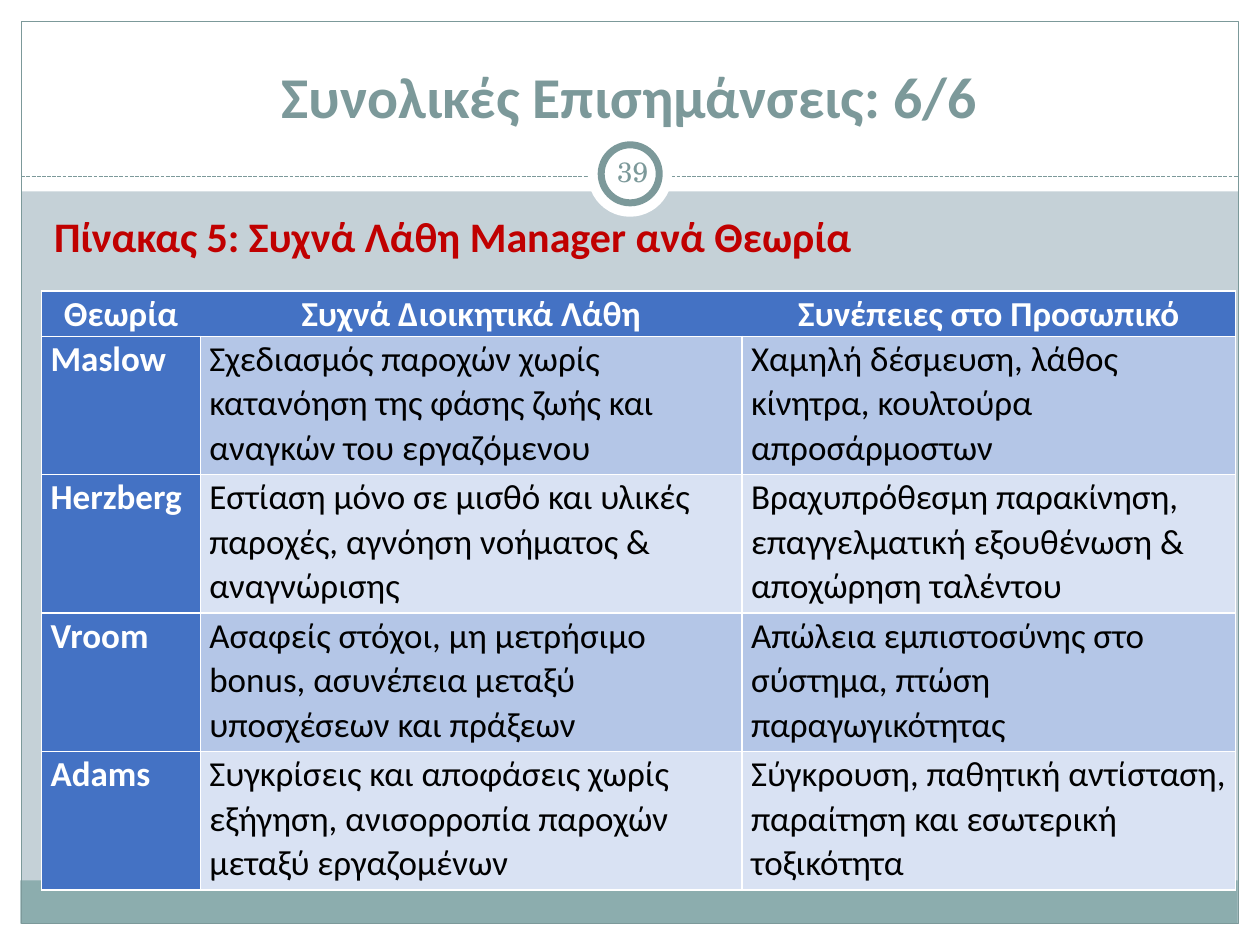
from lxml import etree
from pptx import Presentation
from pptx import util as u
from pptx.dml.color import RGBColor
from pptx.enum import dml, shapes, text
from pptx.oxml import ns

Cm, Pt = u.Cm, u.Pt
COLORS = {k: RGBColor.from_string(v) for k, v in {
    "back": "C5D1D7", "white": "FFFFFF", "black": "000000", "teal": "7C999A",
    "band": "8CADAE", "red": "C00000", "head": "4472C4",
    "odd": "B4C6E7", "even": "D9E2F3"}.items()}


def write(tf, words, size, color, bold=False, font="Calibri", align="LEFT",
          anchor="TOP", margins=(0.25, 0.13, 0.25, 0.13), spacing=None):
    tf.word_wrap = True
    tf.vertical_anchor = text.MSO_ANCHOR[anchor]
    sides = ("margin_left", "margin_top", "margin_right", "margin_bottom")
    for side, value in zip(sides, margins):
        setattr(tf, side, Cm(value))
    p = tf.paragraphs[0]
    p.alignment = text.PP_ALIGN[align]
    p.line_spacing = spacing
    r = p.add_run()
    r.text = words
    for name, value in {"size": Pt(size), "bold": bold, "name": font}.items():
        setattr(r.font, name, value)
    r.font.color.rgb = COLORS[color]


def border(cell, side, color=None):
    ln = etree.SubElement(cell._tc.get_or_add_tcPr(), ns.qn(f"a:ln{side}"), w=str(Pt(1)))
    if color is None:
        etree.SubElement(ln, ns.qn("a:noFill"))
    else:
        fill = etree.SubElement(ln, ns.qn("a:solidFill"))
        etree.SubElement(fill, ns.qn("a:srgbClr"), val=str(COLORS[color]))


prs = Presentation()
prs.slide_width, prs.slide_height = Cm(25.4), Cm(19.05)
s = prs.slides.add_slide(prs.slide_layouts[5])
s.background.fill.solid()
s.background.fill.fore_color.rgb = COLORS["back"]

# Frame, bottom band, dashed rule and number badge
RECT, OVAL = shapes.MSO_SHAPE.RECTANGLE, shapes.MSO_SHAPE.OVAL
decor = [
    (RECT, (0, 18.62, 25.4, 0.43), "white", None),
    (RECT, (0, 0, 25.4, 3.86), "white", None),
    (RECT, (0, 0, 0.43, 19.05), "white", None),
    (RECT, (24.97, 0, 0.43, 19.05), "white", None),
    (RECT, (0.41, 17.75, 24.54, 0.87), "band", None),
    (RECT, (0.43, 0.43, 24.54, 18.19), None, 0.75),
    ("rule", (0.43, 3.56, 24.97, 3.56), None, 0.75),
    (OVAL, (11.85, 2.67, 1.7, 1.7), "white", None),
    (OVAL, (12.12, 2.92, 1.17, 1.17), "white", 4),
]
for kind, box, fill, width in decor:
    box = [Cm(v) for v in box]
    if kind == "rule":
        sp = s.shapes.add_connector(shapes.MSO_CONNECTOR.STRAIGHT, *box)
        sp.line.dash_style = dml.MSO_LINE.SQUARE_DOT
        etree.SubElement(sp.element.spPr, ns.qn("a:effectLst"))
    else:
        sp = s.shapes.add_shape(kind, *box)
        sp.shadow.inherit = False
        if fill:
            sp.fill.solid()
            sp.fill.fore_color.rgb = COLORS[fill]
        else:
            sp.fill.background()
    if width:
        sp.line.color.rgb = COLORS["teal"]
        sp.line.width = Pt(width)
    else:
        sp.line.fill.background()

# Table caption and slide number
caption = s.shapes.add_textbox(Cm(0.84), Cm(4.11), Cm(23.62), Cm(1.22))
write(caption.text_frame, "Πίνακας 5: Συχνά Λάθη Manager ανά Θεωρία", 24, "red", True)
number = s.shapes.add_textbox(Cm(12.12), Cm(2.84), Cm(1.27), Cm(1.22))
write(number.text_frame, "39", 16, "teal", font="TeX Gyre Schola", align="CENTER",
      anchor="MIDDLE", margins=[0.13] * 4)

# Title, brought in front of the frame
title = s.shapes.title
title.left, title.top, title.width, title.height = Cm(0.84), Cm(0.64), Cm(23.7), Cm(2.11)
write(title.text_frame, "Συνολικές Επισημάνσεις: 6/6", 33, "teal", True,
      align="CENTER", anchor="BOTTOM")
title.element.getparent().append(title.element)

# Table of common mistakes
rows = [
    ("Θεωρία", "Συχνά Διοικητικά Λάθη", "Συνέπειες στο Προσωπικό"),
    ("Maslow",
     "Σχεδιασμός παροχών χωρίς κατανόηση της φάσης ζωής και αναγκών του εργαζόμενου",
     "Χαμηλή δέσμευση, λάθος κίνητρα, κουλτούρα απροσάρμοστων"),
    ("Herzberg",
     "Εστίαση μόνο σε μισθό και υλικές παροχές, αγνόηση νοήματος & αναγνώρισης",
     "Βραχυπρόθεσμη παρακίνηση, επαγγελματική εξουθένωση & αποχώρηση ταλέντου"),
    ("Vroom",
     "Ασαφείς στόχοι, μη μετρήσιμο bonus, ασυνέπεια μεταξύ υποσχέσεων και πράξεων",
     "Απώλεια εμπιστοσύνης στο σύστημα, πτώση παραγωγικότητας"),
    ("Adams",
     "Συγκρίσεις και αποφάσεις χωρίς εξήγηση, ανισορροπία παροχών μεταξύ εργαζομένων",
     "Σύγκρουση, παθητική αντίσταση, παραίτηση και εσωτερική τοξικότητα"),
]
widths = (3.2, 10.92, 9.95)
heights = [0.91] + [2.79] * 4
table = s.shapes.add_table(len(rows), len(widths), Cm(0.84), Cm(5.87),
                           Cm(sum(widths)), Cm(sum(heights))).table
for col, width in zip(table.columns, widths):
    col.width = Cm(width)
for row, height in zip(table.rows, heights):
    row.height = Cm(height)
for i, row in enumerate(rows):
    for j, words in enumerate(row):
        cell = table.cell(i, j)
        head = i == 0 or j == 0
        write(cell.text_frame, words, 20, "white" if head else "black", head,
              align="LEFT" if i else "CENTER", spacing=1.04)
        cell.margin_left = cell.margin_right = Cm(0.18)
        cell.margin_top = cell.margin_bottom = 0
        cell.vertical_anchor = text.MSO_ANCHOR.TOP
        for side in "LRTB":
            inner = (side == "L" and j > 0) or (side == "R" and j < len(widths) - 1)
            border(cell, side, None if i == 0 and inner else "white")
        cell.fill.solid()
        cell.fill.fore_color.rgb = COLORS["head" if head else "odd" if i % 2 else "even"]

prs.save("out.pptx")
